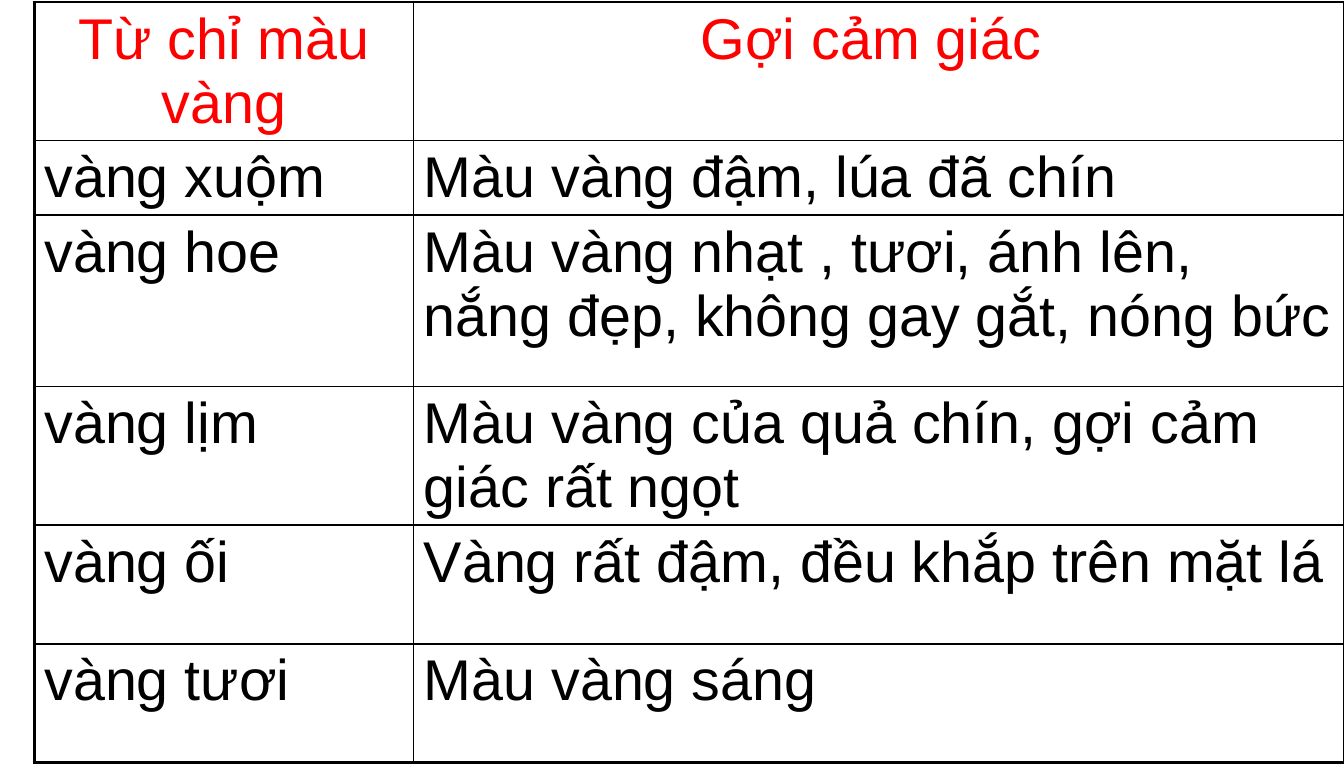
import pptx
import pptx.dml.color
import pptx.enum.text
import pptx.oxml.ns
import pptx.util
from lxml import etree

Inches = pptx.util.Inches
Pt = pptx.util.Pt
qn = pptx.oxml.ns.qn

COLOURS = {"heading": "FF0000", "body": "000000", "border": "000000"}
HEADINGS = ("Từ chỉ màu vàng", "Gợi cảm giác ")
SHADES = (
    ("vàng xuộm", "Màu vàng đậm, lúa đã chín"),
    ("vàng hoe", "Màu vàng nhạt , tươi, ánh lên, nắng đẹp, không gay gắt, nóng bức"),
    ("vàng lịm", "Màu vàng của quả chín, gợi cảm giác rất ngọt"),
    ("vàng ối", "Vàng rất đậm, đều khắp trên mặt lá"),
    ("vàng tươi", "Màu vàng sáng"),
)
COLUMN_WIDTHS = (3.67, 9)
ROW_HEIGHTS = (0.73, 0.65, 1.66, 1.15, 1.15, 1.15)


class SlideBuilder:
    font = "Arial"
    size = Pt(40)
    inner_line = Pt(1)
    outer_line = Pt(2.25)

    def __init__(self, slide):
        self.slide = slide

    def add_table(self, rows, left, top, height):
        frame = self.slide.shapes.add_table(
            len(rows), len(COLUMN_WIDTHS), Inches(left), Inches(top),
            Inches(sum(COLUMN_WIDTHS)), Inches(height))
        grid = frame.table
        for column, width in zip(grid.columns, COLUMN_WIDTHS):
            column.width = Inches(width)
        for row, row_height in zip(grid.rows, ROW_HEIGHTS):
            row.height = Inches(row_height)
        frame.height = Inches(height)

        last_row, last_column = len(rows) - 1, len(COLUMN_WIDTHS) - 1
        for r, texts in enumerate(rows):
            for c, text in enumerate(texts):
                cell = grid.cell(r, c)
                self.add_borders(cell, {"L": c == 0, "R": c == last_column,
                                        "T": r == 0, "B": r == last_row})
                cell.fill.background()
                self.add_text(cell, text, is_heading=r == 0)

    def add_borders(self, cell, outer_sides):
        """Draw all four sides, with a heavier line where a side is on the table's edge."""
        properties = cell._tc.get_or_add_tcPr()
        for side, is_outer in outer_sides.items():
            width = self.outer_line if is_outer else self.inner_line
            line = etree.SubElement(properties, qn(f"a:ln{side}"), w=str(int(width)))
            fill = etree.SubElement(line, qn("a:solidFill"))
            etree.SubElement(fill, qn("a:srgbClr"), val=COLOURS["border"])

    def add_text(self, cell, text, is_heading):
        paragraph = cell.text_frame.paragraphs[0]
        alignment = pptx.enum.text.PP_ALIGN
        paragraph.alignment = alignment.CENTER if is_heading else alignment.LEFT
        space = etree.SubElement(paragraph._p.get_or_add_pPr(), qn("a:spcBef"))
        etree.SubElement(space, qn("a:spcPct"), val="20000")
        run = paragraph.add_run()
        run.text = text
        run.font.name = self.font
        run.font.size = self.size
        run.font.bold = False
        colour = COLOURS["heading" if is_heading else "body"]
        run.font.color.rgb = pptx.dml.color.RGBColor.from_string(colour)


def main():
    presentation = pptx.Presentation()
    presentation.slide_width = Inches(13)
    presentation.slide_height = Inches(7.5)
    slide = presentation.slides.add_slide(presentation.slide_layouts[6])
    SlideBuilder(slide).add_table((HEADINGS, *SHADES), left=0.33, top=0.02, height=7.58)
    presentation.save("out.pptx")


if __name__ == "__main__":
    main()
